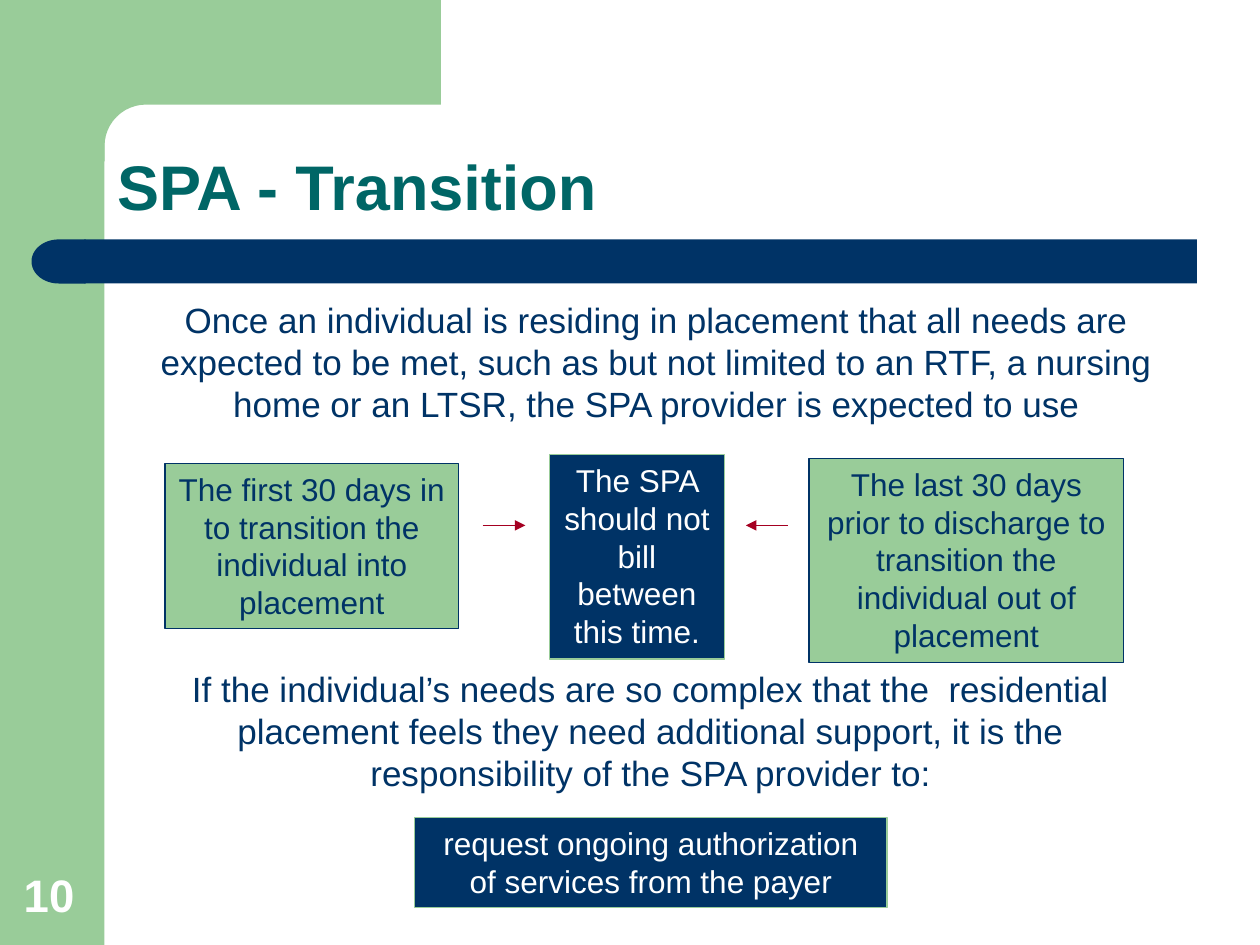
from math import cos, pi, sin

from pptx import Presentation
from pptx.dml.color import RGBColor
from pptx.enum.shapes import MSO_CONNECTOR, MSO_SHAPE
from pptx.enum.text import MSO_ANCHOR, PP_ALIGN
from pptx.oxml.ns import qn
from pptx.util import Inches, Pt
from lxml.etree import SubElement

# Content
NAVY, GREEN, TEAL, RED, WHITE = "003366", "99CC99", "006666", "A50021", "FFFFFF"
TITLE = "SPA - Transition"
NUMBER = "10"
NOTES = [  # text, left, top, width, height
    ("Once an individual is residing in placement that all needs are expected "
     "to be met, such as but not limited to an RTF, a nursing home or an LTSR, "
     "the SPA provider is expected to use", 0.92, 2.32, 8.58, 1.14),
    ("If the individual’s needs are so complex that the  residential placement "
     "feels they need additional support, it is the responsibility of the SPA "
     "provider to:", 1.23, 5.25, 7.87, 1.11),
]
BOXES = [  # text, left, top, width, height, fill, line, font colour
    ("The first 30 days in to transition the individual into placement",
     1.31, 3.68, 2.33, 1.31, GREEN, NAVY, NAVY),
    ("The last 30 days prior to discharge to transition the individual out of "
     "placement", 6.42, 3.64, 2.5, 1.62, GREEN, NAVY, NAVY),
    ("The SPA should not bill between this time.",
     4.36, 3.61, 1.39, 1.62, NAVY, GREEN, WHITE),
    ("request ongoing authorization of services from the payer",
     3.29, 6.49, 3.75, 0.71, NAVY, GREEN, WHITE),
]
ARROWS = [(3.83, 4.17), (6.25, 5.92)]  # start and end x
ARROW_Y = 4.17


def rgb(code):
    return RGBColor.from_string(code)


def place(shape, *area):
    shape.left, shape.top, shape.width, shape.height = map(Inches, area)


def paint(shape, fill, line=None):
    shape.shadow.inherit = False
    shape.fill.solid()
    shape.fill.fore_color.rgb = rgb(fill)
    if line:
        shape.line.color.rgb = rgb(line)
        shape.line.width = Pt(0.75)
    else:
        shape.line.fill.background()


def write(shape, text, size, color, align=PP_ALIGN.CENTER,
          anchor=MSO_ANCHOR.TOP, bold=False):
    frame = shape.text_frame
    frame.word_wrap = True
    frame.vertical_anchor = anchor
    para = frame.paragraphs[0]
    para.text = text
    para.alignment = align
    para.space_before = Pt(0)
    font = para.font
    font.name, font.size, font.bold = "Arial", Pt(size), bold
    font.color.rgb = rgb(color)
    return para


def add_block(kind, area, fill, line=None):
    shape = shapes.add_shape(kind, *map(Inches, area))
    paint(shape, fill, line)
    return shape


deck = Presentation()
deck.slide_width, deck.slide_height = Inches(10), Inches(7.5)
slide = deck.slides.add_slide(deck.slide_layouts[5])
shapes = slide.shapes
title = shapes.title

# Green side band and top corner with a rounded inner edge
add_block(MSO_SHAPE.RECTANGLE, (0, 0, 0.83, 7.5), GREEN)
turns = [pi / 2 * step / 12 for step in range(13)]
arc = [(1.16 - 0.33 * sin(turn), 1.16 - 0.33 * cos(turn)) for turn in turns]
edge = [(3.5, 0), (3.5, 0.83), *arc, (0.83, 1.28), (0.5, 1.28), (0.5, 0)]
dots = [(round(x * 1000), round(y * 1000)) for x, y in edge]
path = shapes.build_freeform(*dots[0], scale=Inches(1) / 1000)
path.add_line_segments(dots[1:], close=True)
paint(path.convert_to_shape(), GREEN)

# Navy bar with a round left end
add_block(MSO_SHAPE.RECTANGLE, (0.67, 1.9, 8.83, 0.35), NAVY)
cap = add_block(MSO_SHAPE.FLOWCHART_DELAY, (0.25, 1.9, 0.43, 0.35), NAVY)
cap.rotation = 180

# Title and slide number
place(title, 0.83, 0.83, 8.67, 1)
head = write(title, TITLE, 36, TEAL, PP_ALIGN.LEFT, MSO_ANCHOR.BOTTOM, True)
head.line_spacing = 0.9
badge = shapes.add_textbox(*map(Inches, (0.09, 6.83, 0.64, 0.53)))
write(badge, NUMBER, 26, WHITE, PP_ALIGN.LEFT, MSO_ANCHOR.BOTTOM, True)

# Paragraphs and boxes
for text, *area in NOTES:
    write(shapes.add_textbox(*map(Inches, area)), text, 20, NAVY)
for text, *area, fill, line, color in BOXES:
    write(add_block(MSO_SHAPE.RECTANGLE, area, fill, line), text, 18, color)

# Arrows toward the middle box
for start, end in ARROWS:
    arrow = shapes.add_connector(
        MSO_CONNECTOR.STRAIGHT,
        *map(Inches, (start, ARROW_Y, end, ARROW_Y)))
    arrow.line.color.rgb = rgb(RED)
    arrow.line.width = Pt(0.75)
    props = arrow._element.spPr
    SubElement(props.find(qn("a:ln")), qn("a:tailEnd"), type="triangle")
    SubElement(props, qn("a:effectLst"))

deck.save("out.pptx")
